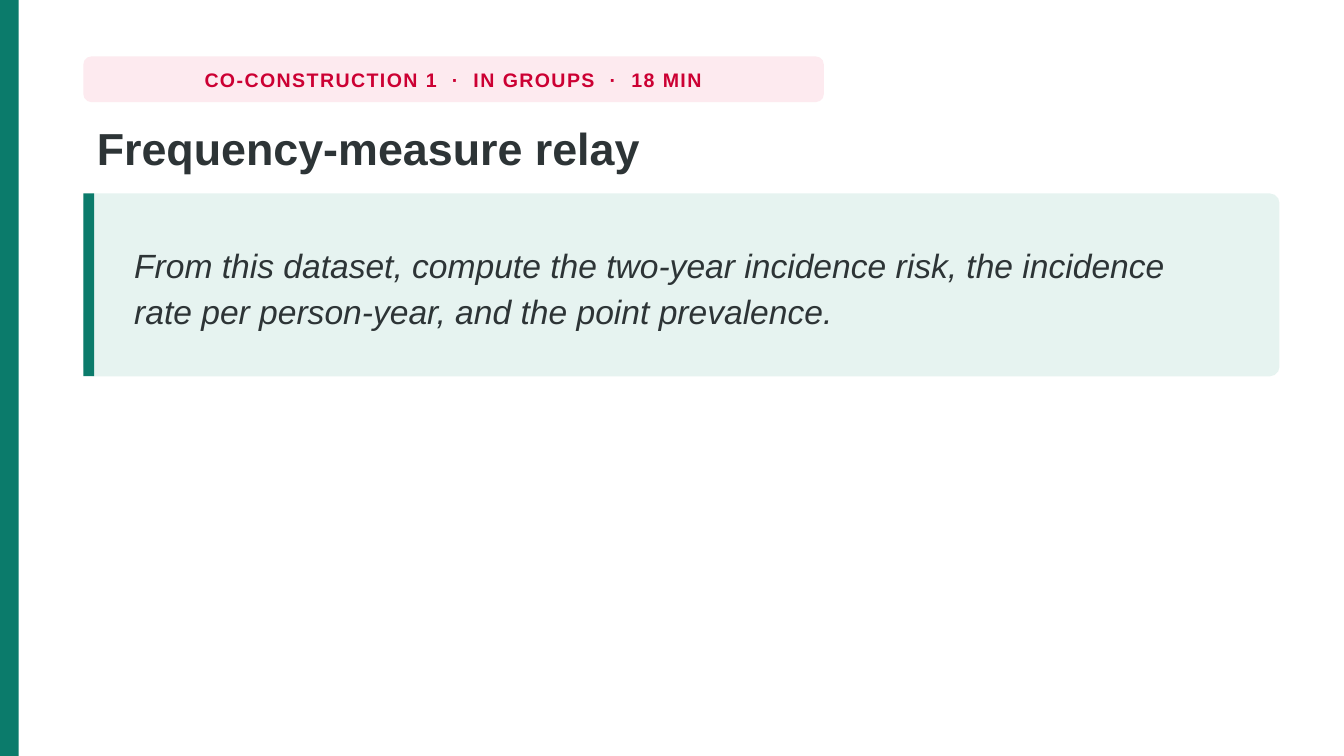
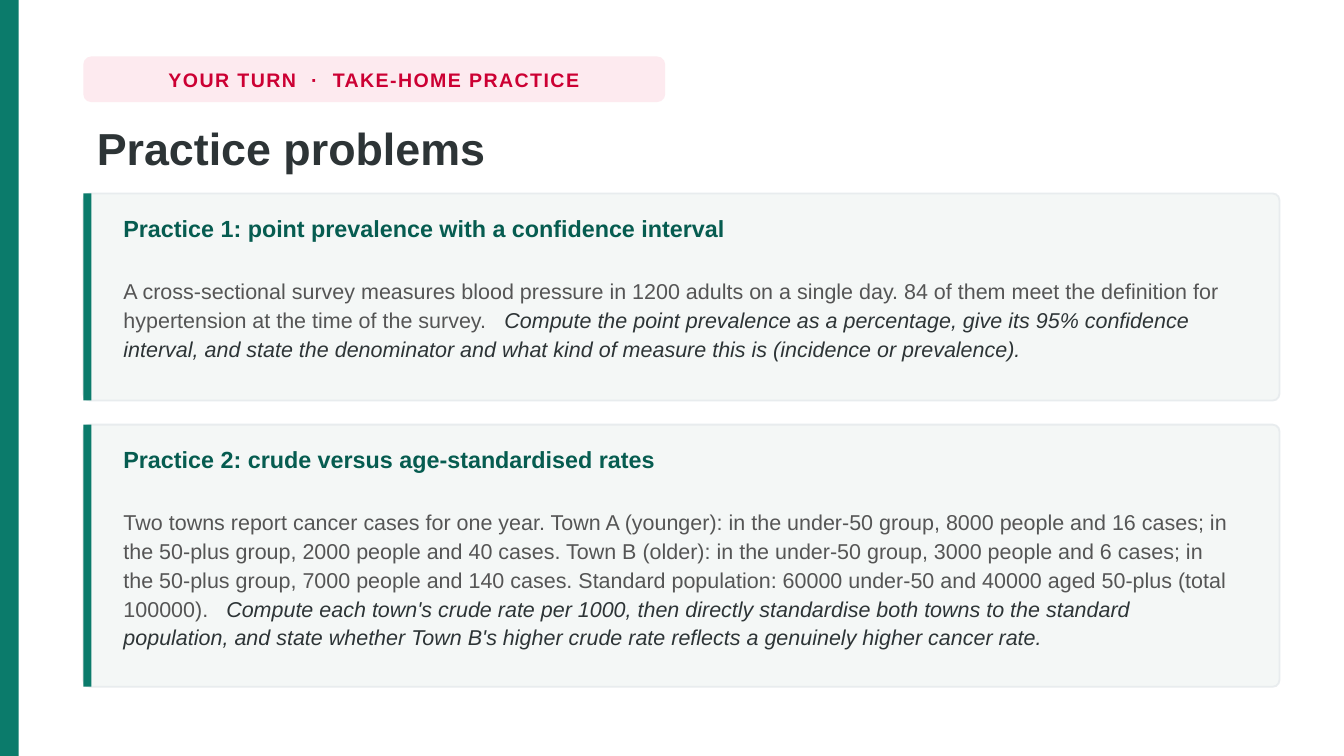
from pptx import Presentation
from pptx.dml.color import RGBColor
from pptx.enum.shapes import MSO_SHAPE
from pptx.enum.text import MSO_ANCHOR, MSO_AUTO_SIZE, PP_ALIGN
from pptx.util import Inches, Pt

GREEN = RGBColor(0x0B, 0x7B, 0x6B)
DARK_GREEN = RGBColor(0x06, 0x5C, 0x50)
MINT = RGBColor(0xE6, 0xF3, 0xF0)
RED = RGBColor(0xCC, 0x00, 0x33)
PINK = RGBColor(0xFD, 0xEA, 0xEF)
INK = RGBColor(0x2D, 0x34, 0x36)
GREY = RGBColor(0x55, 0x55, 0x55)
PALE = RGBColor(0xF4, 0xF7, 0xF6)
RULE = RGBColor(0xE8, 0xEC, 0xEE)

FONT = "Arial"
WIDTH, HEIGHT = 10, 5.625
LEFT, CONTENT_W = 0.62, 8.9
CONTENT_TOP, CARD_GAP = 1.44, 0.18

RELAY = {
    "tag": "CO-CONSTRUCTION 1  ·  IN GROUPS  ·  18 MIN",
    "tag_w": 5.51,
    "title": "Frequency-measure relay",
}
QUESTION = (
    "From this dataset, compute the two-year incidence risk, the incidence "
    "rate per person-year, and the point prevalence."
)
PRACTICE = {
    "tag": "YOUR TURN  ·  TAKE-HOME PRACTICE",
    "tag_w": 4.33,
    "title": "Practice problems",
}
PROBLEMS = [
    {
        "height": 1.54,
        "heading": "Practice 1: point prevalence with a confidence interval",
        "facts": "A cross-sectional survey measures blood pressure in 1200 adults on a "
                 "single day. 84 of them meet the definition for hypertension at the "
                 "time of the survey.   ",
        "task": "Compute the point prevalence as a percentage, give its 95% confidence "
                "interval, and state the denominator and what kind of measure this is "
                "(incidence or prevalence).",
    },
    {
        "height": 1.95,
        "heading": "Practice 2: crude versus age-standardised rates",
        "facts": "Two towns report cancer cases for one year. Town A (younger): in the "
                 "under-50 group, 8000 people and 16 cases; in the 50-plus group, 2000 "
                 "people and 40 cases. Town B (older): in the under-50 group, 3000 people "
                 "and 6 cases; in the 50-plus group, 7000 people and 140 cases. Standard "
                 "population: 60000 under-50 and 40000 aged 50-plus (total 100000).   ",
        "task": "Compute each town's crude rate per 1000, then directly standardise both "
                "towns to the standard population, and state whether Town B's higher crude "
                "rate reflects a genuinely higher cancer rate.",
    },
]


def set_font(font, size, color, bold=False, italic=False):
    font.name = FONT
    font.size = Pt(size)
    font.color.rgb = color
    font.bold = bold
    font.italic = italic


def add_block(s, x, y, w, h, fill, radius=0, line=None):
    kind = MSO_SHAPE.ROUNDED_RECTANGLE if radius else MSO_SHAPE.RECTANGLE
    sp = s.shapes.add_shape(kind, Inches(x), Inches(y), Inches(w), Inches(h))
    sp.shadow.inherit = False
    sp.fill.solid()
    sp.fill.fore_color.rgb = fill
    if radius:
        sp.adjustments[0] = radius / h
    if line:
        sp.line.color.rgb = line
        sp.line.width = Pt(1)
    else:
        sp.line.fill.background()
    return sp


def add_panel(s, y, h, fill, radius, bar_w, line=None):
    add_block(s, LEFT, y, CONTENT_W, h, fill, radius, line)
    add_block(s, LEFT, y, bar_w, h, GREEN)


def add_text(s, x, y, w, h, anchor=MSO_ANCHOR.TOP):
    tf = s.shapes.add_textbox(Inches(x), Inches(y), Inches(w), Inches(h)).text_frame
    tf.word_wrap = True
    tf.vertical_anchor = anchor
    return tf


def add_slide(prs, head):
    s = prs.slides.add_slide(prs.slide_layouts[5])
    add_block(s, 0, 0, 0.14, HEIGHT, GREEN)

    tf = add_block(s, LEFT, 0.42, head["tag_w"], 0.34, PINK, 0.06).text_frame
    tf.word_wrap = False
    tf.vertical_anchor = MSO_ANCHOR.MIDDLE
    p = tf.paragraphs[0]
    p.alignment = PP_ALIGN.CENTER
    set_font(p.font, 10.5, RED, bold=True)
    r = p.add_run()
    r.text = head["tag"]
    r._r.get_or_add_rPr().set("spc", "80")

    title = s.shapes.title
    title.left, title.top = Inches(LEFT), Inches(0.84)
    title.width, title.height = Inches(CONTENT_W), Inches(0.56)
    tf = title.text_frame
    tf.text = head["title"]
    tf.auto_size = MSO_AUTO_SIZE.NONE
    tf.vertical_anchor = MSO_ANCHOR.TOP
    p = tf.paragraphs[0]
    p.alignment = PP_ALIGN.LEFT
    p.line_spacing = 1.02
    set_font(p.font, 24, INK, bold=True)
    return s


def add_question(s):
    h = 1.36
    add_panel(s, CONTENT_TOP, h, MINT, 0.07, 0.08)
    tf = add_text(s, 0.9, CONTENT_TOP + 0.05, 8.35, h - 0.1, MSO_ANCHOR.MIDDLE)
    p = tf.paragraphs[0]
    p.text = QUESTION
    p.line_spacing = 1.16
    set_font(p.font, 18, INK, italic=True)


def add_problem(s, y, problem):
    h = problem["height"]
    add_panel(s, y, h, PALE, 0.05, 0.06, RULE)
    tf = add_text(s, 0.82, y + 0.08, 8.48, h - 0.16)
    p = tf.paragraphs[0]
    p.text = problem["heading"]
    p.line_spacing = 1.12
    p.space_after = Pt(17.5)
    set_font(p.font, 12.5, DARK_GREEN, bold=True)

    p = tf.add_paragraph()
    p.line_spacing = 1.12
    for part, color, italic in (("facts", GREY, False), ("task", INK, True)):
        r = p.add_run()
        r.text = problem[part]
        set_font(r.font, 11.5, color, italic=italic)


def main():
    prs = Presentation()
    prs.slide_width, prs.slide_height = Inches(WIDTH), Inches(HEIGHT)

    add_question(add_slide(prs, RELAY))

    s = add_slide(prs, PRACTICE)
    y = CONTENT_TOP
    for problem in PROBLEMS:
        add_problem(s, y, problem)
        y += problem["height"] + CARD_GAP

    prs.save("out.pptx")


if __name__ == "__main__":
    main()
